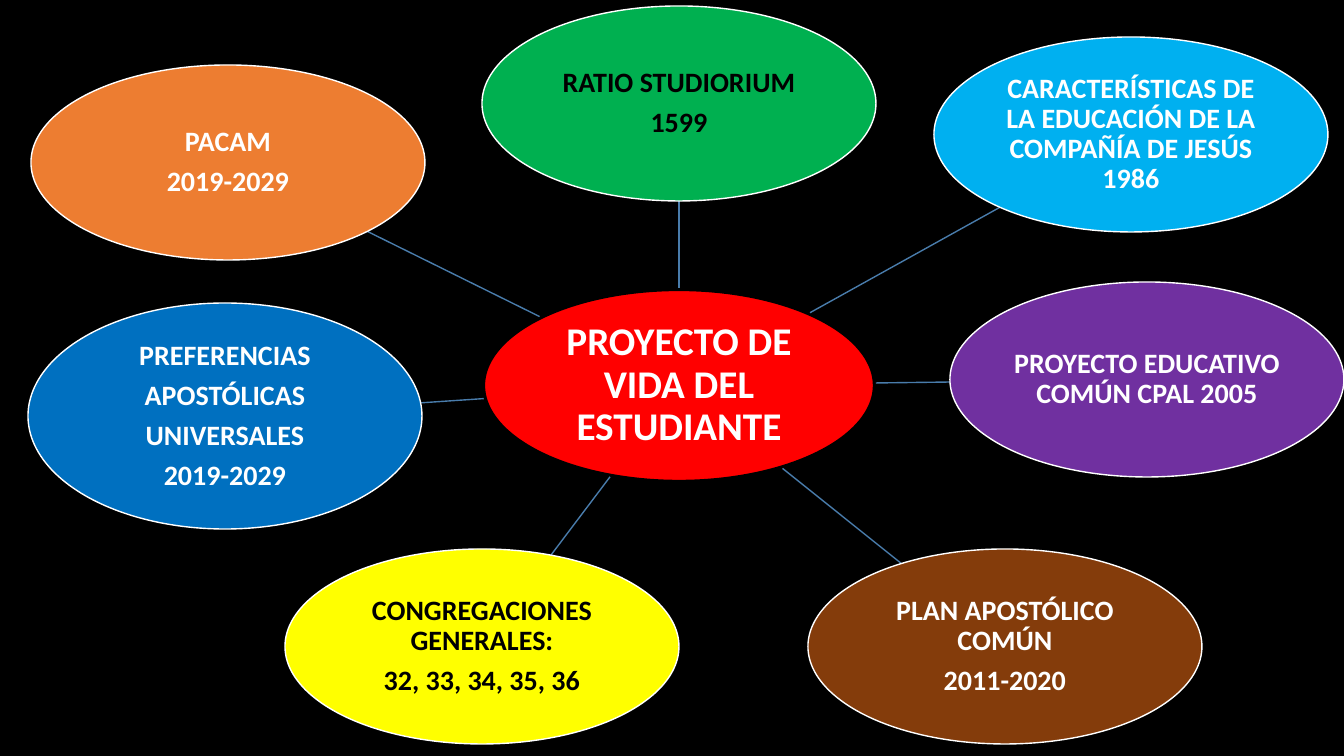
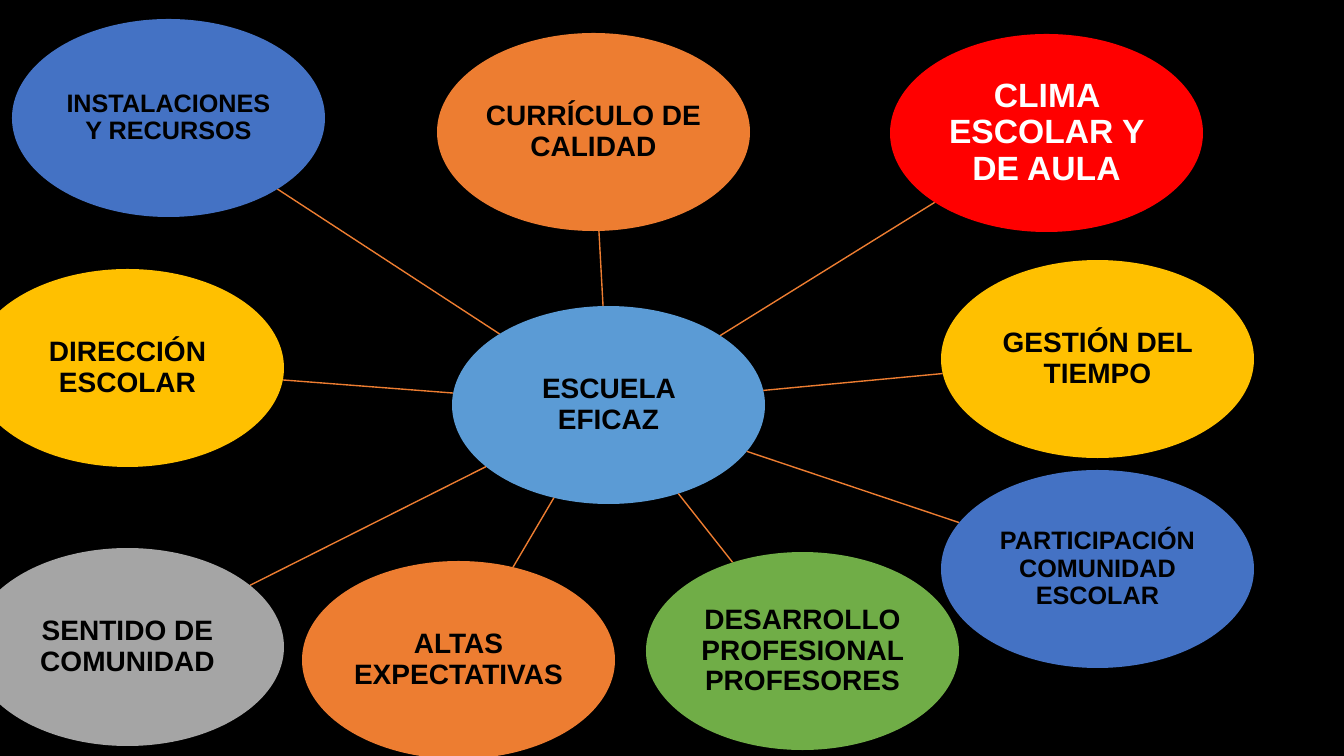
from dataclasses import dataclass
from math import hypot

from lxml.etree import SubElement
from pptx import Presentation
from pptx.dml.color import RGBColor
from pptx.enum.shapes import MSO_CONNECTOR, MSO_SHAPE
from pptx.enum.text import MSO_ANCHOR, PP_ALIGN
from pptx.oxml.ns import qn
from pptx.slide import Slide
from pptx.util import Emu, Pt

SLIDE_W, SLIDE_H = 1344, 756
EMU_PER_PX = 12192000 / SLIDE_W


@dataclass(frozen=True)
class Theme:
    black: str = "000000"
    white: str = "FFFFFF"
    red: str = "FF0000"
    orange: str = "ED7D31"
    gold: str = "FFC000"
    yellow: str = "FFFF00"
    emerald: str = "00B050"
    green: str = "70AD47"
    sky: str = "00B0F0"
    pale_blue: str = "5B9BD5"
    blue: str = "4472C4"
    deep_blue: str = "0070C0"
    steel: str = "497CAB"
    purple: str = "7030A0"
    brown: str = "843C0B"
    gray: str = "A5A5A5"
    hub_size: int = 28
    large: int = 24
    body: int = 20
    small: int = 18
    line_spacing: float = 0.9
    space_after: float = 0.35
    thin: float = 1
    thick: float = 4.5


T = Theme()


@dataclass(frozen=True)
class Node:
    text: str
    x: int
    y: int
    fill: str
    color: str = T.black
    size: int = T.body
    h: int | None = None


@dataclass(frozen=True)
class RadialMap:
    font: str
    w: int
    h: int
    spoke: str
    hub: Node
    nodes: tuple[Node, ...]
    hub_outline: str | None = None
    outline: str | None = None

    def height(self, node: Node) -> int:
        return node.h or self.h

    def center(self, node: Node) -> tuple[float, float]:
        return node.x + self.w / 2, node.y + self.height(node) / 2

    def edge_toward(self, node: Node, other: Node) -> tuple[float, float]:
        (cx, cy), (ox, oy) = self.center(node), self.center(other)
        dx, dy = ox - cx, oy - cy
        t = 1 / hypot(dx / (self.w / 2), dy / (self.height(node) / 2))
        return cx + dx * t, cy + dy * t


PROJECT = RadialMap(
    font="Calibri", w=394, h=195, spoke=T.steel, hub_outline=T.black, outline=T.white,
    hub=Node("PROYECTO DE VIDA DEL ESTUDIANTE", 482, 288, T.red, T.white, T.hub_size),
    nodes=(
        Node("RATIO STUDIORIUM\n1599", 482, 6, T.emerald),
        Node("CARACTERÍSTICAS DE LA EDUCACIÓN DE LA COMPAÑÍA DE JESÚS 1986",
             934, 37, T.sky, T.white),
        Node("PROYECTO EDUCATIVO COMÚN CPAL 2005", 950, 282, T.purple, T.white),
        Node("PACAM\n2019-2029", 31, 65, T.orange, T.white),
        Node("PREFERENCIAS\nAPOSTÓLICAS\nUNIVERSALES\n2019-2029",
             28, 303, T.deep_blue, T.white, h=226),
        Node("CONGREGACIONES GENERALES:\n32, 33, 34, 35, 36", 285, 549, T.yellow),
        Node("PLAN APOSTÓLICO COMÚN\n2011-2020", 808, 549, T.brown, T.white),
    ),
)

SCHOOL = RadialMap(
    font="Arial", w=313, h=198, spoke=T.orange,
    hub=Node("ESCUELA EFICAZ", 452, 306, T.pale_blue),
    nodes=(
        Node("CURRÍCULO DE CALIDAD", 437, 33, T.orange),
        Node("CLIMA ESCOLAR Y DE AULA", 890, 34, T.red, T.white, T.large),
        Node("GESTIÓN DEL TIEMPO", 941, 260, T.gold),
        Node("PARTICIPACIÓN COMUNIDAD ESCOLAR", 941, 470, T.blue, size=T.small),
        Node("DESARROLLO PROFESIONAL PROFESORES", 646, 552, T.green),
        Node("ALTAS EXPECTATIVAS", 302, 561, T.orange),
        Node("SENTIDO DE COMUNIDAD", -29, 548, T.gray),
        Node("DIRECCIÓN ESCOLAR", -29, 269, T.gold),
        Node("INSTALACIONES Y RECURSOS", 12, 19, T.blue, size=T.small),
    ),
)


def px(n: float) -> Emu:
    return Emu(round(n * EMU_PER_PX))


def rgb(color: str) -> RGBColor:
    return RGBColor.from_string(color)


def add_node(slide: Slide, rm: RadialMap, node: Node,
             outline: str | None, weight: float) -> None:
    sp = slide.shapes.add_shape(MSO_SHAPE.OVAL, px(node.x), px(node.y),
                                px(rm.w), px(rm.height(node)))
    sp.shadow.inherit = False
    sp.fill.solid()
    sp.fill.fore_color.rgb = rgb(node.fill)
    if outline:
        sp.line.color.rgb = rgb(outline)
        sp.line.width = Pt(weight)
    else:
        sp.line.fill.background()
    tf = sp.text_frame
    tf.word_wrap = True
    tf.vertical_anchor = MSO_ANCHOR.MIDDLE
    tf.margin_left = tf.margin_right = tf.margin_top = tf.margin_bottom = px(1)
    tf.text = node.text
    for p in tf.paragraphs:
        p.alignment = PP_ALIGN.CENTER
        p.line_spacing = T.line_spacing
        p.space_after = Pt(node.size * T.space_after)
        p.font.name = rm.font
        p.font.size = Pt(node.size)
        p.font.bold = True
        p.font.color.rgb = rgb(node.color)


def add_spoke(slide: Slide, rm: RadialMap, node: Node) -> None:
    start = rm.edge_toward(rm.hub, node)
    end = rm.edge_toward(node, rm.hub)
    cxn = slide.shapes.add_connector(MSO_CONNECTOR.STRAIGHT,
                                     *(px(n) for n in (*start, *end)))
    cxn.line.color.rgb = rgb(rm.spoke)
    cxn.line.width = Pt(T.thin)
    SubElement(cxn._element.spPr, qn("a:effectLst"))


def add_radial_map(slide: Slide, rm: RadialMap) -> None:
    add_node(slide, rm, rm.hub, rm.hub_outline, T.thick)
    for node in rm.nodes:
        add_spoke(slide, rm, node)
        add_node(slide, rm, node, rm.outline, T.thin)


def main() -> None:
    prs = Presentation()
    prs.slide_width, prs.slide_height = px(SLIDE_W), px(SLIDE_H)
    background = prs.slide_master.background.fill
    background.solid()
    background.fore_color.rgb = rgb(T.black)
    for rm in (PROJECT, SCHOOL):
        add_radial_map(prs.slides.add_slide(prs.slide_layouts[6]), rm)
    prs.save("out.pptx")


if __name__ == "__main__":
    main()
